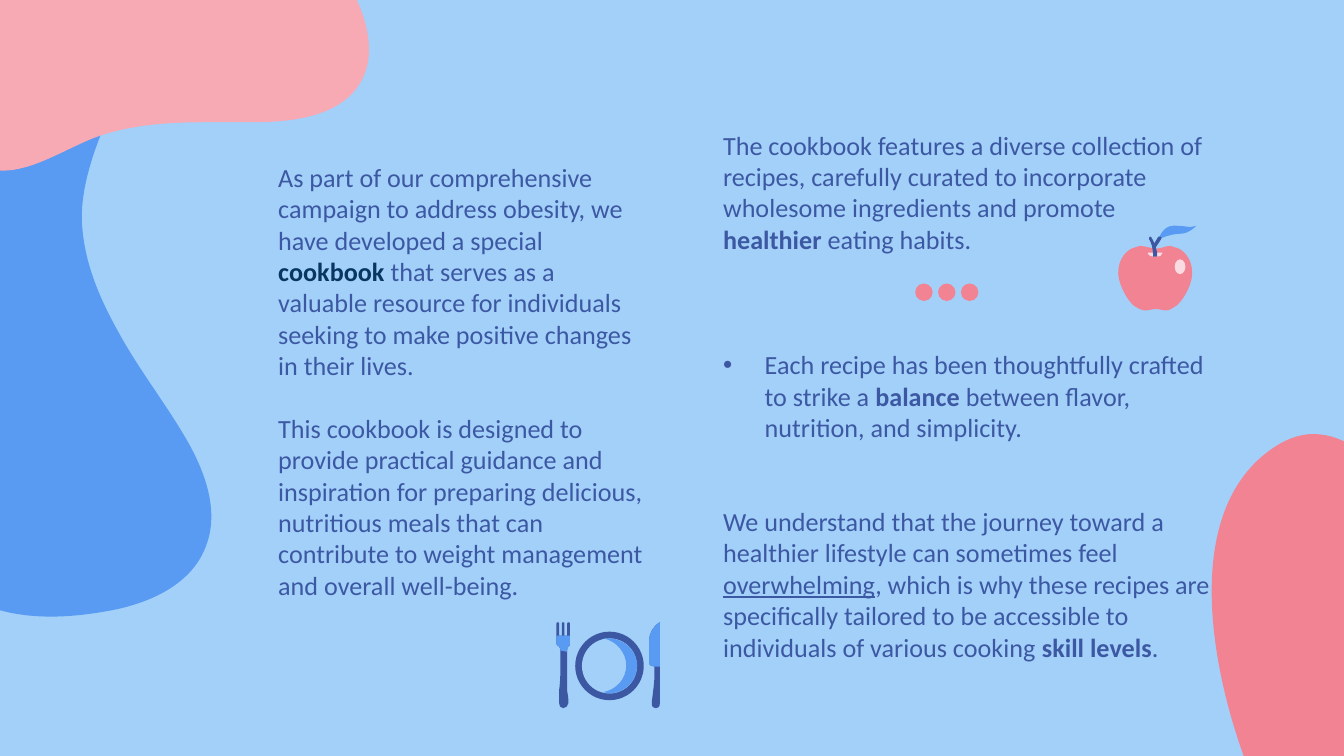
from lxml import etree
from pptx import Presentation
from pptx import util as u
from pptx.dml.color import RGBColor
from pptx.enum import shapes, text
from pptx.oxml.ns import qn

HUE = {"sky": "A2D0F9", "blue": "599AF2", "navy": "3D58A3", "ink": "063661",
       "pink": "F7A9B4", "rose": "F28393", "pale": "F9DCE2"}

deck = Presentation()
deck.slide_width = u.Inches(10)
deck.slide_height = deck.slide_width * 9 // 16
cell = deck.slide_width // 10  # ten square columns across the slide
page = deck.slides.add_slide(deck.slide_layouts[3])
page.background.fill.solid()
page.background.fill.fore_color.rgb = RGBColor.from_string(HUE["sky"])
tree = page.shapes


def draw(form, hue):
    """Fill a preset (kind, x, y, w, h) or an outline: start, then lines (x, y) and cubics (six numbers)."""
    if isinstance(form, tuple):
        kind, *box = form
        item = tree.add_shape(kind, *[round(n * cell) for n in box])
    else:
        dots = [(seg[i] * cell, seg[i + 1] * cell) for seg in form for i in range(0, len(seg), 2)]
        pen = tree.build_freeform(*dots[0], scale=1.0)
        pen.add_line_segments(dots[1:], close=False)
        item = pen.convert_to_shape()
        route = item._element.find(".//" + qn("a:path"))
        steps = iter(route.findall(qn("a:lnTo")))
        for seg in form[1:]:
            trio = [next(steps) for _ in range(len(seg) // 2)]
            if len(trio) == 3:  # three steps become one curve
                curve = etree.Element(qn("a:cubicBezTo"))
                trio[0].addprevious(curve)
                for step in trio:
                    curve.append(step[0])
                    route.remove(step)
        etree.SubElement(route, qn("a:close"))
    item.shadow.inherit = False
    item.fill.solid()
    item.fill.fore_color.rgb = RGBColor.from_string(HUE[hue])
    item.line.fill.background()
    return item


def write(para, words, hue="navy", bold=False, line=False):
    run = para.add_run()
    run.text = words
    font = run.font
    font.name, font.size, font.bold, font.underline = "Calibri", u.Pt(14), bold, line
    font.color.rgb = RGBColor.from_string(HUE[hue])


# Background blobs
draw([(-0.28, 4.42), (0.04, 4.62, 0.44, 4.61, 0.78, 4.55), (1.09, 4.5, 1.42, 4.36, 1.53, 4.07),
      (1.64, 3.8, 1.52, 3.49, 1.37, 3.24), (1.21, 2.97, 1.02, 2.73, 0.87, 2.45),
      (0.72, 2.18, 0.6, 1.88, 0.61, 1.57), (0.62, 1.36, 0.69, 1.15, 0.77, 0.95),
      (0.87, 0.7, 0.99, 0.43, 0.89, 0.18), (0.84, 0.07, 0.76, -0.01, 0.66, -0.08),
      (0.62, -0.1, 0.58, -0.12, 0.54, -0.14), (0.07, -0.36, -0.53, -0.28, -0.92, 0.06),
      (-1.29, 0.38, -1.45, 0.88, -1.5, 1.36), (-1.56, 1.94, -1.46, 2.53, -1.24, 3.06),
      (-1.13, 3.34, -0.98, 3.6, -0.8, 3.84), (-0.65, 4.03, -0.49, 4.29, -0.28, 4.42)], "blue")
draw([(0.93, -1), (0.01, -1, -0.82, -0.42, -0.51, 0.75), (-0.45, 0.96, -0.34, 1.17, -0.13, 1.25),
      (-0.08, 1.26, -0.03, 1.27, 0.02, 1.27), (0.24, 1.27, 0.47, 1.12, 0.69, 1.03),
      (0.95, 0.93, 1.24, 0.91, 1.52, 0.91), (1.88, 0.91), (2.2, 0.91, 2.55, 0.86, 2.69, 0.6),
      (2.79, 0.42, 2.74, 0.19, 2.66, 0.01), (2.35, -0.67, 1.62, -1, 0.93, -1)], "pink")
draw([(9.77, 3.23), (9.67, 3.23, 9.56, 3.27, 9.45, 3.35), (8.76, 3.85, 9.04, 5.08, 9.29, 5.72),
      (9.34, 5.85, 9.4, 5.99, 9.5, 6.1), (9.59, 6.19, 9.71, 6.27, 9.84, 6.27),
      (9.98, 6.25, 10.06, 6.2, 10.15, 6.15), (10.33, 6.03, 10.5, 5.9, 10.61, 5.71),
      (10.72, 5.54, 10.75, 5.34, 10.78, 5.13), (10.8, 4.99, 10.82, 4.84, 10.81, 4.7),
      (10.8, 4.23, 10.34, 3.23, 9.77, 3.23)], "rose")

# Three dots
disc = shapes.MSO_SHAPE.OVAL
for i in range(3):
    draw((disc, 6.81 + 0.17 * i, 2.11, 0.13, 0.13), "rose")

# Text columns: a paragraph is blank lines above, bulleted, runs
left = [
    (0, False, [("As part of our comprehensive campaign to address obesity, we have developed a special ", {}),
                ("cookbook ", {"hue": "ink", "bold": True}),
                ("that serves as a valuable resource for individuals seeking to make positive "
                 "changes in their lives.", {})]),
    (1, False, [("This cookbook is designed to provide practical guidance and inspiration for preparing "
                 "delicious, nutritious meals that can contribute to weight management and overall "
                 "well-being.", {})])]
right = [
    (0, False, [("The cookbook features a diverse collection of recipes, carefully curated to incorporate "
                 "wholesome ingredients and promote ", {}),
                ("healthier", {"bold": True}), (" eating habits.", {})]),
    (3, True, [("Each recipe has been thoughtfully crafted to strike a ", {}),
               ("balance ", {"bold": True}), ("between flavor, nutrition, and simplicity.", {})]),
    (2, False, [("We understand that the journey toward a healthier lifestyle can sometimes feel ", {}),
                ("overwhelming", {"line": True}),
                (", which is why these recipes are specifically tailored to be accessible to individuals "
                 "of various cooking ", {}),
                ("skill levels", {"bold": True}), (".", {})])]
title, *bodies = list(page.placeholders)[:3]
title.element.getparent().remove(title.element)
boxes = [(1.97, 1.15, 2.95, 3.64), (5.28, 0.91, 3.88, 4.11)]
for body, box, paras in zip(bodies, boxes, (left, right)):
    tree.element.append(body.element)  # text sits above the blobs
    body.left, body.top, body.width, body.height = [round(n * cell) for n in box]
    frame = body.text_frame
    frame.word_wrap = True
    frame.auto_size = text.MSO_AUTO_SIZE.SHAPE_TO_FIT_TEXT
    frame.vertical_anchor = text.MSO_ANCHOR.TOP
    for i, (gap, dot, runs) in enumerate(paras):
        para = frame.paragraphs[0] if i == 0 else frame.add_paragraph()
        para.space_before = u.Pt(16.8 * gap)
        prop = para._p.get_or_add_pPr()
        hang = round(0.31 * cell) if dot else 0
        prop.set("marL", str(hang))
        prop.set("indent", str(-hang))
        if dot:
            tint = etree.SubElement(prop, qn("a:buClr"))
            etree.SubElement(tint, qn("a:srgbClr"), val=HUE["navy"])
            etree.SubElement(prop, qn("a:buChar"), char="•")
        else:
            etree.SubElement(prop, qn("a:buNone"))
        for words, form in runs:
            write(para, words, **form)

# Apple: fruit, leaf, shine, hollow, stem
draw([(8.48, 1.83), (8.45, 1.84), (8.39, 1.85, 8.32, 1.92, 8.32, 2.03),
      (8.32, 2.1, 8.37, 2.21, 8.43, 2.27), (8.46, 2.29, 8.49, 2.31, 8.52, 2.31),
      (8.55, 2.31, 8.57, 2.3, 8.6, 2.3), (8.63, 2.3, 8.65, 2.31, 8.68, 2.31),
      (8.7, 2.31, 8.73, 2.29, 8.76, 2.27), (8.82, 2.21, 8.87, 2.11, 8.87, 2.03),
      (8.87, 1.92, 8.8, 1.85, 8.74, 1.84), (8.71, 1.83), (8.67, 1.83, 8.64, 1.85, 8.6, 1.85),
      (8.56, 1.85, 8.53, 1.83, 8.48, 1.83)], "rose")
draw([(8.75, 1.68), (8.73, 1.68), (8.65, 1.68, 8.62, 1.78, 8.62, 1.78), (8.63, 1.78),
      (8.64, 1.77, 8.72, 1.74, 8.78, 1.74), (8.85, 1.74, 8.9, 1.68, 8.9, 1.68),
      (8.86, 1.69), (8.84, 1.69, 8.8, 1.68, 8.75, 1.68)], "blue")
draw((disc, 8.74, 1.93, 0.08, 0.11), "pale")
draw([(8.54, 1.88), (8.54, 1.9, 8.56, 1.91, 8.6, 1.91), (8.63, 1.91, 8.65, 1.9, 8.65, 1.88)], "pale")
draw([(8.63, 1.76), (8.62, 1.76), (8.59, 1.81), (8.57, 1.77), (8.56, 1.76),
      (8.55, 1.76, 8.55, 1.77, 8.55, 1.78), (8.57, 1.81, 8.58, 1.85, 8.58, 1.91), (8.61, 1.91),
      (8.61, 1.88), (8.6, 1.84), (8.64, 1.78), (8.65, 1.77, 8.64, 1.76, 8.63, 1.76)], "navy")

# Fork tines
for i in range(3):
    tine = draw((shapes.MSO_SHAPE.ROUNDED_RECTANGLE, 4.14 + 0.04 * i, 4.63, 0.02, 0.11), "navy")
    tine.adjustments[0] = 0.5

# Plate
draw((disc, 4.28, 4.7, 0.51, 0.51), "navy")
draw((disc, 4.33, 4.75, 0.41, 0.41), "sky")
draw([(4.53, 4.75), (4.49, 4.75), (4.59, 4.77, 4.66, 4.86, 4.66, 4.95),
      (4.66, 5.05, 4.59, 5.13, 4.49, 5.15), (4.53, 5.16), (4.64, 5.16, 4.73, 5.08, 4.74, 4.97),
      (4.75, 4.85, 4.65, 4.75, 4.53, 4.75)], "blue")

# Knife and fork: the coloured end starts each outline, the handle completes it
blade = [(4.91, 4.63), (4.86, 4.66, 4.83, 4.71, 4.83, 4.77), (4.83, 4.94),
         (4.83, 4.95, 4.85, 4.96, 4.87, 4.96)]
draw(blade + [(4.87, 5.02), (4.87, 5.09, 4.85, 5.21, 4.85, 5.23), (4.85, 5.26, 4.86, 5.27, 4.88, 5.27),
              (4.9, 5.27, 4.91, 5.26, 4.91, 5.23)], "navy")
draw(blade + [(4.91, 4.96)], "blue")
head = [(4.24, 4.73), (4.14, 4.73), (4.14, 4.79), (4.14, 4.8, 4.15, 4.81, 4.16, 4.81),
        (4.17, 4.82, 4.17, 4.84, 4.17, 4.84)]
neck = [(4.22, 4.85), (4.22, 4.83, 4.22, 4.82, 4.23, 4.81), (4.24, 4.81, 4.24, 4.8, 4.24, 4.79)]
draw(head + [(4.17, 4.93), (4.17, 5, 4.17, 5.07, 4.16, 5.14), (4.16, 5.23),
             (4.16, 5.25, 4.17, 5.27, 4.19, 5.27), (4.21, 5.27, 4.23, 5.25, 4.23, 5.23),
             (4.23, 5.22, 4.23, 5.19, 4.22, 5.14), (4.22, 5.07, 4.22, 5, 4.22, 4.93)] + neck, "navy")
draw(head + neck, "blue")

deck.save("out.pptx")
